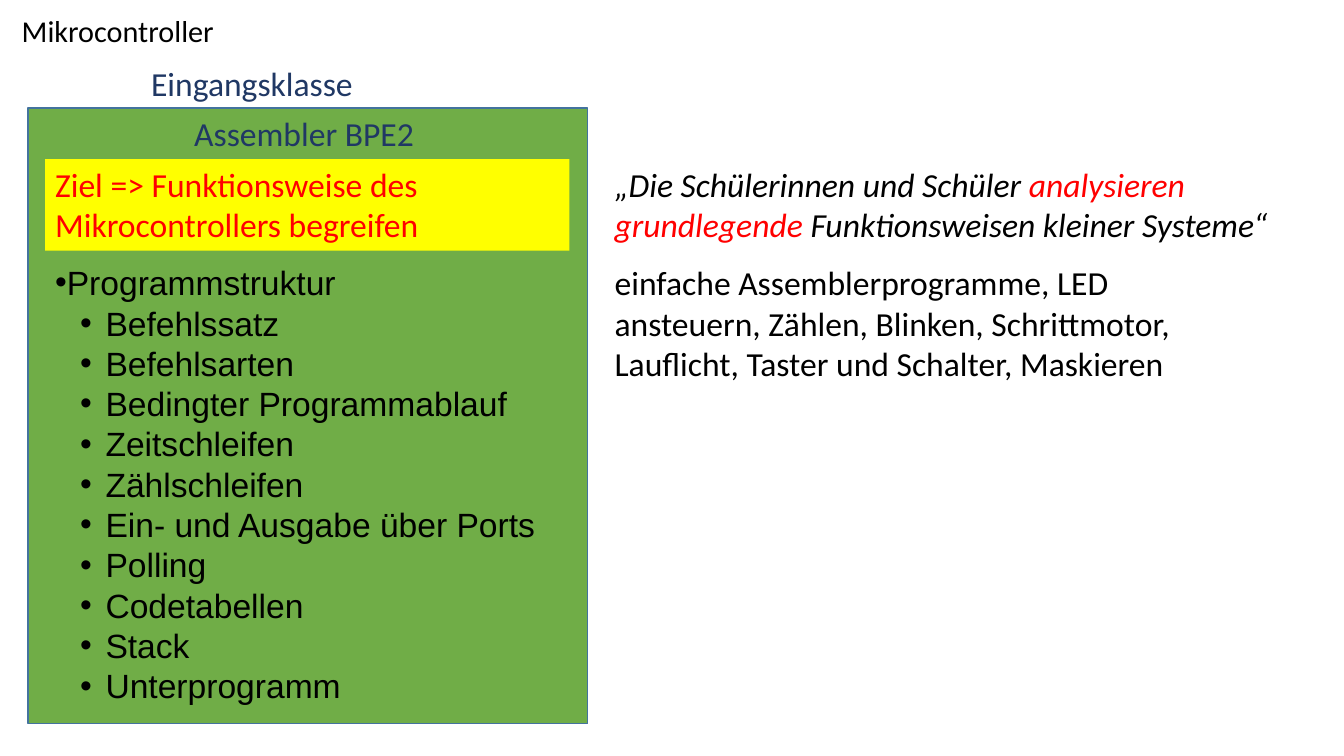
"""Build the Mikrocontroller slide on the Eingangsklasse assembler unit."""
from dataclasses import dataclass

from lxml import etree
from pptx import Presentation
from pptx import util as u
from pptx.dml import color
from pptx.enum import shapes, text
from pptx.oxml import ns

BLACK, RED, NAVY = "000000", "FF0000", "203864"
GREEN, STEEL, YELLOW = "70AD47", "43739E", "FFFF00"
LEFT, RIGHT = 1.14, 15.24
GOAL_TOP, CONTENT_TOP = 4.01, 6.48
COLUMN_WIDTH = 13.21
TOPIC = "Programmstruktur"
SUBTOPICS = (
    "Befehlssatz", "Befehlsarten", "Bedingter Programmablauf",
    "Zeitschleifen", "Zählschleifen", "Ein- und Ausgabe über Ports",
    "Polling", "Codetabellen", "Stack", "Unterprogramm",
)


@dataclass(frozen=True)
class Run:
    words: str
    colour: str = BLACK
    italic: bool = False
    size: float = 24
    font: str = "Calibri"


@dataclass(frozen=True)
class Block:
    left: float
    top: float
    width: float
    height: float
    runs: tuple[Run, ...]
    fill: str | None = None
    line: str | None = None
    centred: bool = False
    wrap: bool = True
    anchor: text.MSO_ANCHOR = text.MSO_ANCHOR.TOP


BLOCKS = (
    Block(0, 0, 5.94, 1.52, (Run("Mikrocontroller", size=21.6),),
          centred=True, anchor=text.MSO_ANCHOR.MIDDLE),
    Block(0.71, 2.72, 14.1, 15.52, (Run("Assembler BPE2 ", NAVY),),
          fill=GREEN, line=STEEL, centred=True),
    Block(3.53, 1.45, 5.64, 1.27, (Run("Eingangsklasse", NAVY),),
          centred=True, wrap=False),
    Block(LEFT, GOAL_TOP, COLUMN_WIDTH, 2.31,
          (Run("Ziel => Funktionsweise des Mikrocontrollers begreifen", RED),),
          fill=YELLOW),
    Block(RIGHT, GOAL_TOP, 17.6, 2.31, (
        Run("„Die Schülerinnen und Schüler ", italic=True),
        Run("analysieren grundlegende", RED, italic=True),
        Run(" Funktionsweisen kleiner Systeme“", italic=True),
    )),
    Block(RIGHT, CONTENT_TOP, 15.04, 3.33, (
        Run("einfache Assemblerprogramme, LED ansteuern, Zählen, Blinken, "
            "Schrittmotor, Lauflicht, Taster und Schalter, Maskieren"),
    )),
)


def rgb(value: str) -> color.RGBColor:
    return color.RGBColor.from_string(value)


def add_run(paragraph, part: Run) -> None:
    run = paragraph.add_run()
    run.text = part.words
    run.font.name = part.font
    run.font.size = u.Pt(part.size)
    run.font.italic = part.italic
    run.font.color.rgb = rgb(part.colour)


def add_block(slide, block: Block) -> None:
    place = [u.Cm(n) for n in (block.left, block.top, block.width, block.height)]
    if block.fill:
        area = slide.shapes.add_shape(shapes.MSO_SHAPE.RECTANGLE, *place)
        area.shadow.inherit = False
        area.fill.solid()
        area.fill.fore_color.rgb = rgb(block.fill)
        if block.line:
            area.line.color.rgb = rgb(block.line)
            area.line.width = u.Pt(1)
        else:
            area.line.fill.background()
    else:
        area = slide.shapes.add_textbox(*place)
    frame = area.text_frame
    frame.word_wrap = block.wrap
    frame.vertical_anchor = block.anchor
    paragraph = frame.paragraphs[0]
    paragraph.alignment = text.PP_ALIGN.CENTER if block.centred else text.PP_ALIGN.LEFT
    for part in block.runs:
        add_run(paragraph, part)


def add_bullet(paragraph, margin: float, hanging: float) -> None:
    properties = paragraph._p.get_or_add_pPr()
    properties.set("marL", str(u.Cm(margin)))
    properties.set("indent", str(-u.Cm(hanging)))
    etree.SubElement(properties, ns.qn("a:buFont")).set("typeface", "Arial")
    etree.SubElement(properties, ns.qn("a:buChar")).set("char", "•")


def add_topics(slide) -> None:
    frame = slide.shapes.add_textbox(
        u.Cm(LEFT), u.Cm(CONTENT_TOP), u.Cm(COLUMN_WIDTH), u.Cm(12.57)).text_frame
    frame.word_wrap = True
    for index, topic in enumerate((TOPIC, *SUBTOPICS)):
        paragraph = frame.add_paragraph() if index else frame.paragraphs[0]
        paragraph.line_spacing = u.Pt(28.8)
        if index:
            paragraph.level = 1
            add_bullet(paragraph, 1.27, 0.64)
        else:
            add_bullet(paragraph, 0, 0)
        add_run(paragraph, Run(topic, font="Arial"))


def main() -> None:
    deck = Presentation()
    deck.slide_width, deck.slide_height = u.Cm(33.87), u.Cm(19.05)
    slide = deck.slides.add_slide(deck.slide_layouts[6])
    for block in BLOCKS:
        add_block(slide, block)
    add_topics(slide)
    deck.save("out.pptx")


if __name__ == "__main__":
    main()
